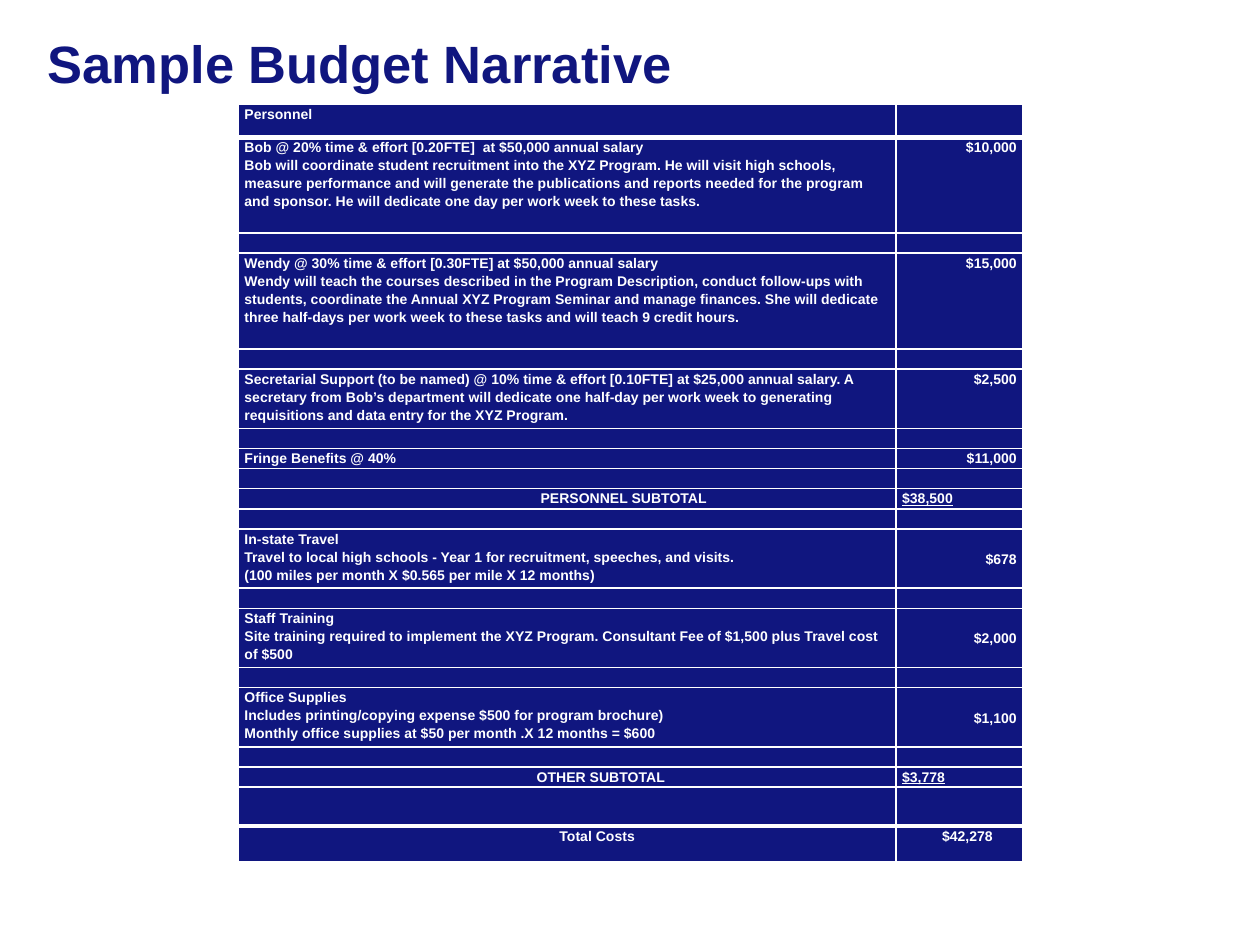
import pptx
import pptx.dml.color
import pptx.enum.text
import pptx.oxml
import pptx.oxml.ns
import pptx.util
from pptx.util import Inches

NAVY = "10167F"
WHITE = "FFFFFF"
ALIGN = pptx.enum.text.PP_ALIGN
ANCHOR = pptx.enum.text.MSO_ANCHOR
GAP = 0.16
SPACER = (GAP, [], "", {})

BUDGET = [
    (0.26, ["Personnel"], "", {}),
    (0.76, ["Bob @ 20% time & effort [0.20FTE]  at $50,000 annual salary",
            "Bob will coordinate student recruitment into the XYZ Program. He will visit high schools, "
            "measure performance and will generate the publications and reports needed for the program "
            "and sponsor. He will dedicate one day per work week to these tasks."], "$10,000", {}),
    SPACER,
    (0.76, ["Wendy @ 30% time & effort [0.30FTE] at $50,000 annual salary",
            "Wendy will teach the courses described in the Program Description, conduct follow-ups with "
            "students, coordinate the Annual XYZ Program Seminar and manage finances. She will dedicate "
            "three half-days per work week to these tasks and will teach 9 credit hours."], "$15,000", {}),
    SPACER,
    (0.47, ["Secretarial Support (to be named) @ 10% time & effort [0.10FTE] at $25,000 annual salary. A "
            "secretary from Bob’s department will dedicate one half-day per work week to generating "
            "requisitions and data entry for the XYZ Program."], "$2,500", {}),
    SPACER,
    (GAP, ["Fringe Benefits @ 40%"], "$11,000", {}),
    SPACER,
    (GAP, ["PERSONNEL SUBTOTAL"], "$38,500", {"indent": 2.35, "subtotal": True}),
    SPACER,
    (0.47, ["In-state Travel",
            "Travel to local high schools - Year 1 for recruitment, speeches, and visits.",
            "(100 miles per month X $0.565 per mile X 12 months)"], "$678", {"anchor": ANCHOR.MIDDLE}),
    SPACER,
    (0.47, ["Staff Training",
            "Site training required to implement the XYZ Program. Consultant Fee of $1,500 plus Travel "
            "cost of $500"], "$2,000", {"anchor": ANCHOR.MIDDLE}),
    SPACER,
    (0.47, ["Office Supplies",
            "Includes printing/copying expense $500 for program brochure)",
            "Monthly office supplies at $50 per month .X 12 months = $600"],
     "$1,100", {"anchor": ANCHOR.MIDDLE}),
    SPACER,
    (GAP, ["OTHER SUBTOTAL"], "$3,778", {"indent": 2.32, "subtotal": True}),
    (0.31, [], "", {}),
    (0.28, ["Total Costs"], "$42,278", {"indent": 2.5, "inset_right": 0.24}),
]


def color(value):
    return pptx.dml.color.RGBColor.from_string(value)


def write_text(para, text, size=8, ink=WHITE, align=ALIGN.LEFT, underline=None, spacing=1.15):
    para.alignment = align
    para.line_spacing = spacing
    if not text:
        para._p.get_or_add_endParaRPr().set("sz", str(size * 100))
        return
    span = para.add_run()
    span.text = text
    span.font.name = "Arial"
    span.font.size = pptx.util.Pt(size)
    span.font.bold = True
    span.font.underline = underline
    span.font.color.rgb = color(ink)


def add_title(page, text):
    box = page.shapes.add_textbox(Inches(0.28), Inches(0.15), Inches(7.92), Inches(0.54))
    frame = box.text_frame
    frame.word_wrap = True
    frame.margin_top = Inches(0.1)
    frame.margin_bottom = 0
    write_text(frame.paragraphs[0], text, size=30, ink=NAVY, spacing=1.0)


def set_borders(cell, top, bottom):
    properties = cell._tc.get_or_add_tcPr()
    for side, points in (("L", 1), ("R", 1), ("T", top), ("B", bottom)):
        properties.append(pptx.oxml.parse_xml(
            f'<a:ln{side} {pptx.oxml.ns.nsdecls("a")} w="{pptx.util.Pt(points)}">'
            f'<a:solidFill><a:srgbClr val="{WHITE}"/></a:solidFill></a:ln{side}>'))


def fill_cell(cell, lines, borders, left=0.05, right=0.05, anchor=ANCHOR.TOP, **style):
    set_borders(cell, *borders)
    cell.fill.solid()
    cell.fill.fore_color.rgb = color(NAVY)
    cell.margin_left, cell.margin_right = Inches(left), Inches(right)
    cell.margin_top = cell.margin_bottom = 0
    cell.vertical_anchor = anchor
    frame = cell.text_frame
    for index, line in enumerate(lines or [""]):
        para = frame.paragraphs[0] if index == 0 else frame.add_paragraph()
        write_text(para, line, **style)


def add_budget_table(page):
    height = sum(entry[0] for entry in BUDGET)
    frame = page.shapes.add_table(len(BUDGET), 2, Inches(1.89), Inches(0.83),
                                  Inches(6.23), Inches(height))
    table = frame.table
    table.first_row = table.horz_banding = False
    table.columns[0].width = Inches(5.22)
    table.columns[1].width = Inches(1.01)
    last = len(BUDGET) - 1
    for index, (row_height, lines, amount, options) in enumerate(BUDGET):
        table.rows[index].height = Inches(row_height)
        borders = (3 if index in (1, last) else 1, 3 if index in (0, last - 1) else 1)
        subtotal = options.get("subtotal", False)
        fill_cell(table.cell(index, 0), lines, borders, left=0.05 + options.get("indent", 0))
        fill_cell(table.cell(index, 1), [amount], borders,
                  right=options.get("inset_right", 0.05),
                  anchor=options.get("anchor", ANCHOR.TOP),
                  align=ALIGN.LEFT if subtotal else ALIGN.RIGHT,
                  underline=subtotal or None)


def main():
    deck = pptx.Presentation()
    deck.slide_width, deck.slide_height = Inches(10), Inches(7.5)
    page = deck.slides.add_slide(deck.slide_layouts[6])
    add_title(page, "Sample Budget Narrative")
    add_budget_table(page)
    deck.save("out.pptx")


if __name__ == "__main__":
    main()
